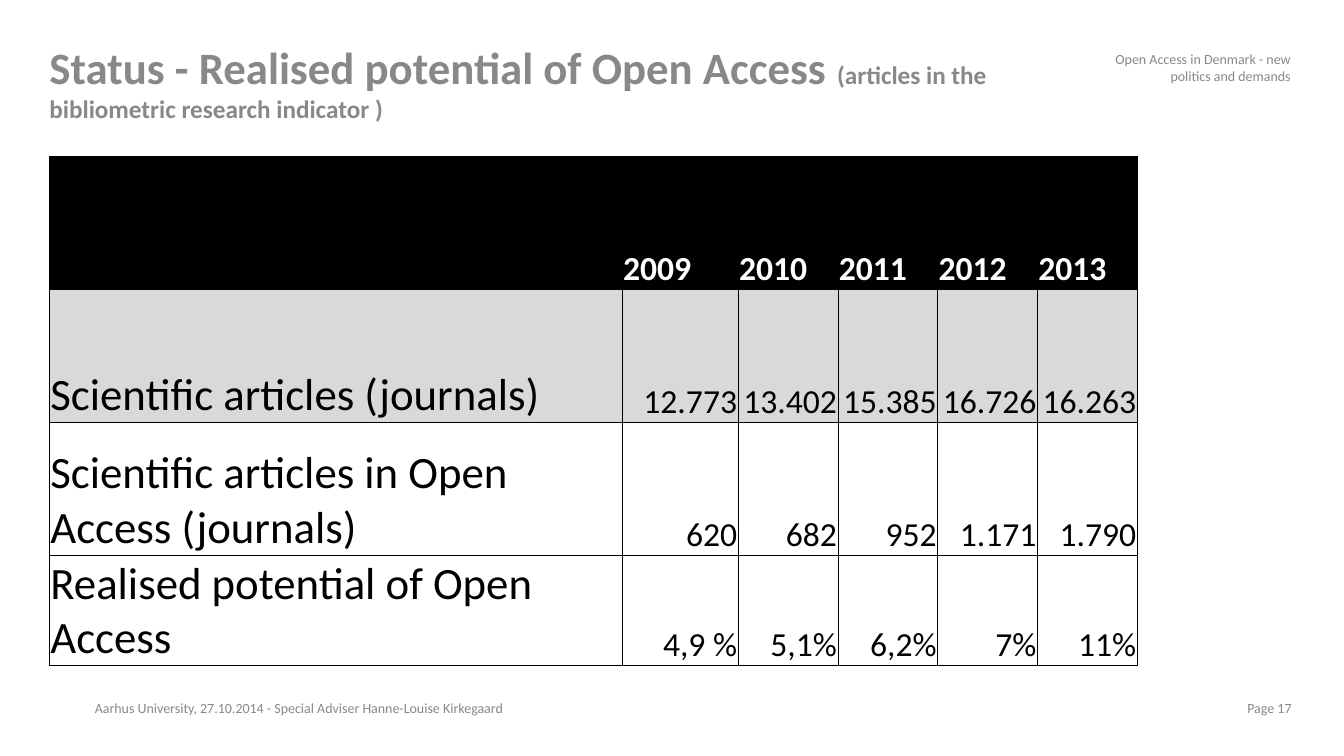
from dataclasses import dataclass

import pptx
import pptx.dml.color
import pptx.enum.text
import pptx.oxml
import pptx.oxml.ns
import pptx.util

Inches = pptx.util.Inches
Pt = pptx.util.Pt
ALIGN = pptx.enum.text.PP_ALIGN
ANCHOR = pptx.enum.text.MSO_ANCHOR


@dataclass(frozen=True)
class Theme:
    font: str = "Calibri"
    grey: str = "888888"
    black: str = "000000"
    white: str = "FFFFFF"
    band: str = "D9D9D9"
    large: int = 32
    figure: int = 24
    subtitle: int = 18
    small: int = 10


THEME = Theme()

ROWS = [
    ["", "2009", "2010", "2011", "2012", "2013"],
    ["Scientific articles (journals)", "12.773", "13.402", "15.385", "16.726", "16.263"],
    ["Scientific articles in Open Access (journals)", "620", "682", "952", "1.171", "1.790"],
    ["Realised potential of Open Access", "4,9 %", "5,1%", "6,2%", "7%", "11%"],
]
ROW_HEIGHTS = [1.32, 1.32, 1.32, 1.03]
COLUMN_WIDTHS = [5.68, 1.15] + [0.99] * 4


def style_font(font, size, color, bold=False):
    font.name = THEME.font
    font.size = Pt(size)
    font.bold = bold
    font.color.rgb = pptx.dml.color.RGBColor.from_string(color)


def clear_insets(frame):
    frame.margin_left = frame.margin_right = frame.margin_top = frame.margin_bottom = 0
    frame.word_wrap = True


def add_title(slide, heading, qualifier):
    title = slide.shapes.title
    title.left, title.top = Inches(0.49), Inches(0.43)
    title.width, title.height = Inches(10.24), Inches(1.12)
    frame = title.text_frame
    clear_insets(frame)
    frame.auto_size = pptx.enum.text.MSO_AUTO_SIZE.NONE
    frame.vertical_anchor = ANCHOR.TOP
    paragraph = frame.paragraphs[0]
    paragraph.alignment = ALIGN.LEFT
    paragraph.line_spacing = 0.96
    for text, size in ((heading, THEME.large), (qualifier, THEME.subtitle)):
        run = paragraph.add_run()
        run.text = text
        style_font(run.font, size, THEME.grey, bold=True)


def add_small_text(slide, text, left, top, width, height, align, anchor):
    box = slide.shapes.add_textbox(Inches(left), Inches(top), Inches(width), Inches(height))
    frame = box.text_frame
    clear_insets(frame)
    frame.vertical_anchor = anchor
    paragraph = frame.paragraphs[0]
    paragraph.text = text
    paragraph.alignment = align
    style_font(paragraph.font, THEME.small, THEME.grey)


def set_borders(cell, widths):
    """Draw the cell's sides; widths maps L, R, T and B to points."""
    properties = cell._tc.get_or_add_tcPr()
    for side, width in widths.items():
        properties.append(pptx.oxml.parse_xml(
            f'<a:ln{side} {pptx.oxml.ns.nsdecls("a")} w="{Pt(width)}"><a:solidFill>'
            f'<a:srgbClr val="{THEME.black}"/></a:solidFill></a:ln{side}>'))


def format_cell(cell, text, row, column):
    header = row == 0
    label = column == 0 and not header
    set_borders(cell, {"L": 0.5, "R": 0.5, "T": 1 if header else 0.5,
                       "B": 1 if row == len(ROWS) - 1 else 0.5})
    fill_color = {0: THEME.black, 1: THEME.band}.get(row)
    if fill_color:
        cell.fill.solid()
        cell.fill.fore_color.rgb = pptx.dml.color.RGBColor.from_string(fill_color)
    else:
        cell.fill.background()
    cell.margin_left = cell.margin_right = cell.margin_top = Inches(0.01)
    cell.margin_bottom = 0
    cell.vertical_anchor = ANCHOR.BOTTOM
    paragraph = cell.text_frame.paragraphs[0]
    paragraph.text = text
    paragraph.alignment = ALIGN.LEFT if header or label else ALIGN.RIGHT
    style_font(paragraph.font, THEME.large if label else THEME.figure,
               THEME.white if header else THEME.black, bold=header)


def add_articles_table(slide):
    table = slide.shapes.add_table(
        len(ROWS), len(COLUMN_WIDTHS), Inches(0.49), Inches(1.55),
        Inches(sum(COLUMN_WIDTHS)), Inches(sum(ROW_HEIGHTS))).table
    table.horz_banding = False
    for column, width in zip(table.columns, COLUMN_WIDTHS):
        column.width = Inches(width)
    for row, height in zip(table.rows, ROW_HEIGHTS):
        row.height = Inches(height)
    for r, texts in enumerate(ROWS):
        for c, text in enumerate(texts):
            format_cell(table.cell(r, c), text, r, c)


def main():
    deck = pptx.Presentation()
    deck.slide_width, deck.slide_height = Inches(13.33), Inches(7.5)
    slide = deck.slides.add_slide(deck.slide_layouts.get_by_name("Title Only"))
    add_title(slide, "Status - Realised potential of Open Access ",
              "(articles in the bibliometric research indicator )")
    add_articles_table(slide)
    add_small_text(slide, "Aarhus University, 27.10.2014 - Special Adviser Hanne-Louise Kirkegaard",
                   0.94, 6.9, 5.59, 0.24, ALIGN.LEFT, ANCHOR.MIDDLE)
    add_small_text(slide, "Open Access in Denmark - new politics and demands",
                   10.98, 0.5, 1.82, 0.35, ALIGN.RIGHT, ANCHOR.TOP)
    add_small_text(slide, "Page 17", 10.98, 6.9, 1.83, 0.24, ALIGN.RIGHT, ANCHOR.MIDDLE)
    deck.save("out.pptx")


if __name__ == "__main__":
    main()
